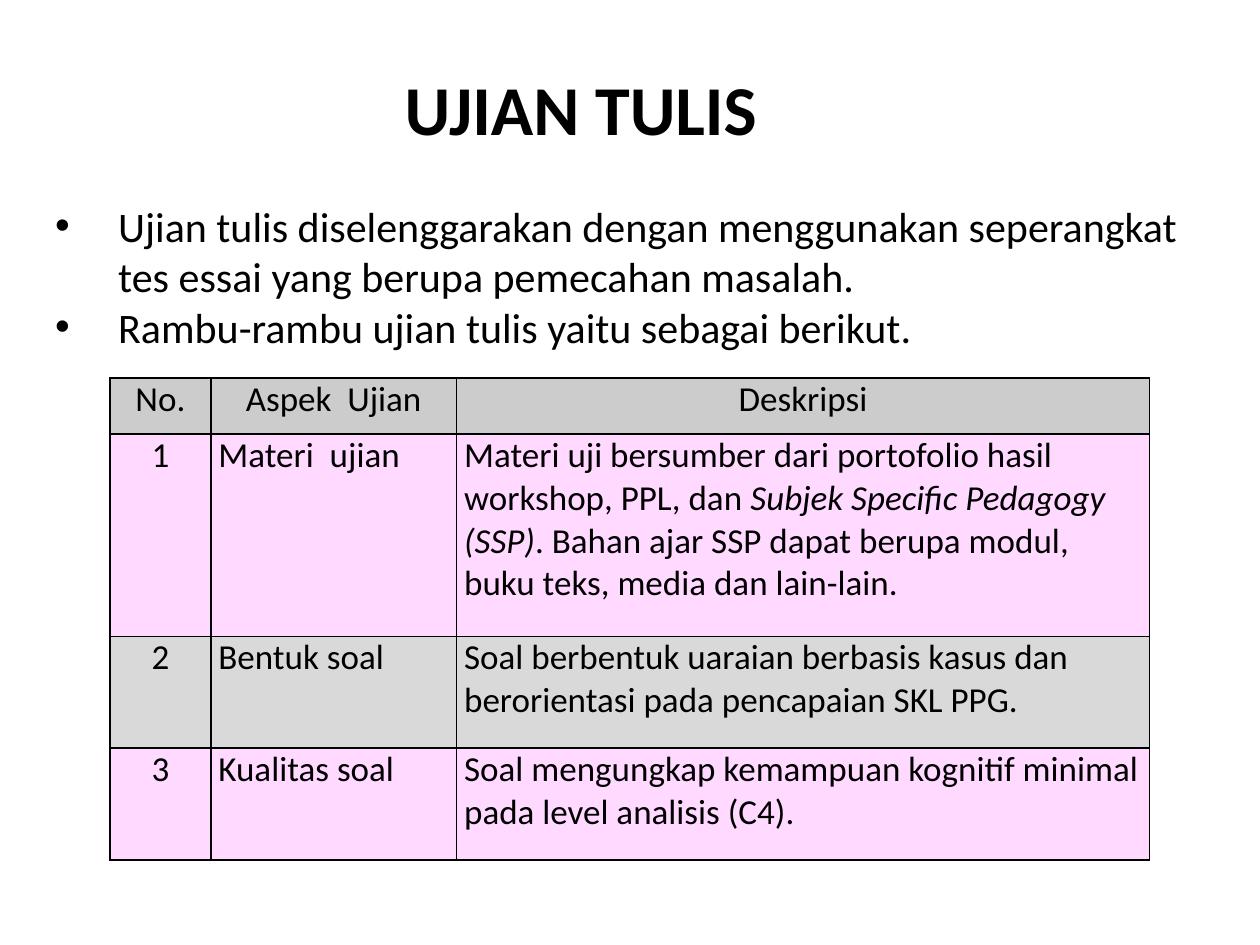
from dataclasses import dataclass

from lxml.etree import SubElement
from pptx import Presentation
from pptx.dml.color import RGBColor
from pptx.enum.text import MSO_ANCHOR, PP_ALIGN
from pptx.oxml.ns import qn
from pptx.util import Pt

FONT = "Calibri"
BLACK = "000000"
BORDER_WIDTH = 1
COLUMN_WIDTHS = (57.6, 140.4, 396)


@dataclass(frozen=True)
class Box:
    left: float
    top: float
    width: float
    height: float

    def lengths(self) -> tuple:
        return Pt(self.left), Pt(self.top), Pt(self.width), Pt(self.height)


@dataclass(frozen=True)
class Row:
    height: float
    fill: str
    number: str
    aspect: str
    description: tuple[str, ...]
    header: bool = False


ROWS = (
    Row(32, "CCCCCC", "No.", "Aspek  Ujian", ("Deskripsi",), header=True),
    Row(115.6, "FFD9FF", "1", "Materi  ujian", (
        "Materi uji bersumber dari portofolio hasil workshop, PPL, dan ",
        "Subjek Specific Pedagogy (SSP)",
        ". Bahan ajar SSP dapat berupa modul, buku teks, media dan lain-lain.",
    )),
    Row(64, "D9D9D9", "2", "Bentuk soal", (
        "Soal berbentuk uaraian berbasis kasus dan berorientasi pada pencapaian SKL PPG.",
    )),
    Row(64, "FFD9FF", "3", "Kualitas soal", (
        "Soal mengungkap kemampuan kognitif minimal pada level analisis (C4).",
    )),
)

BULLETS = (
    "Ujian tulis diselenggarakan dengan menggunakan seperangkat tes essai "
    "yang berupa pemecahan masalah.",
    "Rambu-rambu ujian tulis yaitu sebagai berikut.",
)


def color(value: str) -> RGBColor:
    return RGBColor.from_string(value)


def add_span(para, text: str, *, size: float, bold=False, italic=False) -> None:
    span = para.add_run()
    span.text = text
    span.font.name = FONT
    span.font.size = Pt(size)
    span.font.bold = bold
    span.font.italic = italic
    span.font.color.rgb = color(BLACK)


def add_text_box(page, box: Box, *, anchor=MSO_ANCHOR.TOP):
    frame = page.shapes.add_textbox(*box.lengths()).text_frame
    frame.word_wrap = True
    frame.vertical_anchor = anchor
    return frame


def add_title(page) -> None:
    frame = add_text_box(page, Box(136.8, 28.8, 408.2, 64.8), anchor=MSO_ANCHOR.MIDDLE)
    frame.margin_left = frame.margin_top = frame.margin_bottom = Pt(8.64)
    frame.margin_right = Pt(26.64)
    para = frame.paragraphs[0]
    para.alignment = PP_ALIGN.CENTER
    add_span(para, "UJIAN TULIS", size=40, bold=True)


def add_bullets(page) -> None:
    frame = add_text_box(page, Box(24.5, 110.9, 665.3, 123.8))
    for index, text in enumerate(BULLETS):
        para = frame.add_paragraph() if index else frame.paragraphs[0]
        add_span(para, text, size=24)
        properties = para._p.get_or_add_pPr()
        properties.set("marL", str(Pt(36)))
        properties.set("indent", str(-Pt(36)))
        SubElement(properties, qn("a:buFont"), typeface="Arial")
        SubElement(properties, qn("a:buChar"), char="•")


def add_borders(cell) -> None:
    properties = cell._tc.get_or_add_tcPr()
    for side in ("lnL", "lnR", "lnT", "lnB"):
        line = SubElement(properties, qn(f"a:{side}"), w=str(Pt(BORDER_WIDTH)))
        fill = SubElement(line, qn("a:solidFill"))
        SubElement(fill, qn("a:srgbClr"), val=BLACK)


def fill_cell(cell, texts: tuple[str, ...], *, fill: str, centered: bool) -> None:
    add_borders(cell)
    cell.fill.solid()
    cell.fill.fore_color.rgb = color(fill)
    cell.margin_left = cell.margin_right = Pt(4.32)
    cell.margin_top = cell.margin_bottom = Pt(0)
    para = cell.text_frame.paragraphs[0]
    para.alignment = PP_ALIGN.CENTER if centered else PP_ALIGN.LEFT
    for index, text in enumerate(texts):
        add_span(para, text, size=20, italic=index == 1)


def add_exam_table(page) -> None:
    box = Box(62.9, 216, sum(COLUMN_WIDTHS), sum(row.height for row in ROWS))
    table = page.shapes.add_table(len(ROWS), len(COLUMN_WIDTHS), *box.lengths()).table
    for column, width in zip(table.columns, COLUMN_WIDTHS):
        column.width = Pt(width)
    for row_index, row in enumerate(ROWS):
        table.rows[row_index].height = Pt(row.height)
        contents = ((row.number,), (row.aspect,), row.description)
        for column_index, texts in enumerate(contents):
            fill_cell(table.cell(row_index, column_index), texts, fill=row.fill,
                      centered=row.header or column_index == 0)


def main() -> None:
    deck = Presentation()
    deck.slide_width, deck.slide_height = Pt(720), Pt(540)
    page = deck.slides.add_slide(deck.slide_layouts[6])
    add_title(page)
    add_bullets(page)
    add_exam_table(page)
    deck.save("out.pptx")


if __name__ == "__main__":
    main()
